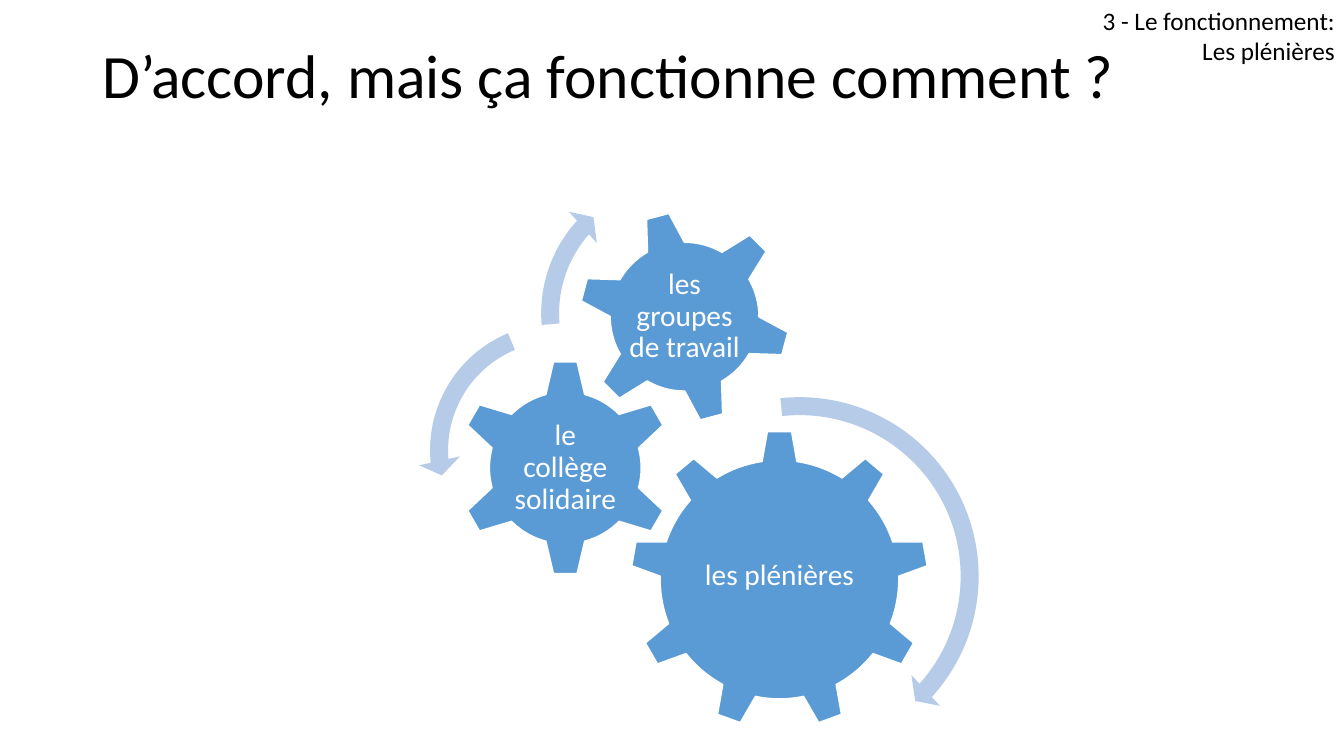
from dataclasses import dataclass

from pptx import Presentation
from pptx import util as u
from pptx.dml.color import RGBColor
from pptx.enum import shapes, text


@dataclass(frozen=True)
class Theme:
    font: str = "Calibri"
    ink: str = "000000"
    paper: str = "FFFFFF"
    gear: str = "5B9BD5"
    arrow: str = "B5CBE7"
    title_size: int = 44
    corner_size: int = 18
    label_size: int = 21


class SlideBuilder:
    """Places elements on a grid of 16 columns by 9 rows."""

    def __init__(self, deck, theme):
        self.theme = theme
        self.page = deck.slides.add_slide(deck.slide_layouts[5])
        self.cell_width = deck.slide_width / 16
        self.cell_height = deck.slide_height / 9

    def place(self, column, row, columns, rows):
        return (u.Emu(round(column * self.cell_width)),
                u.Emu(round(row * self.cell_height)),
                u.Emu(round(columns * self.cell_width)),
                u.Emu(round(rows * self.cell_height)))

    def around(self, centre, columns, rows):
        return self.place(centre[0] - columns / 2, centre[1] - rows / 2, columns, rows)

    def set_text(self, box, lines, size, color, align, spacing=1.0, **frame_format):
        frame = box.text_frame
        for name, value in {"word_wrap": True, **frame_format}.items():
            setattr(frame, name, value)
        for number, line in enumerate(lines):
            para = frame.add_paragraph() if number else frame.paragraphs[0]
            para.alignment, para.line_spacing = align, spacing
            span = para.add_run()
            span.text = line
            for name, value in {"name": self.theme.font, "size": u.Pt(size)}.items():
                setattr(span.font, name, value)
            span.font.color.rgb = RGBColor.from_string(color)

    def title(self, words, *cells):
        box = self.page.shapes.title
        box.left, box.top, box.width, box.height = self.place(*cells)
        self.set_text(box, [words], self.theme.title_size, self.theme.ink,
                      text.PP_ALIGN.LEFT, 0.9, auto_size=text.MSO_AUTO_SIZE.NONE,
                      vertical_anchor=text.MSO_ANCHOR.TOP)

    def corner(self, lines, *cells):
        box = self.page.shapes.add_textbox(*self.place(*cells))
        self.set_text(box, lines, self.theme.corner_size, self.theme.ink,
                      text.PP_ALIGN.RIGHT, auto_size=text.MSO_AUTO_SIZE.SHAPE_TO_FIT_TEXT)

    def solid(self, kind, centre, size, color):
        shape = self.page.shapes.add_shape(kind, *self.around(centre, size, size))
        shape.shadow.inherit = False
        shape.fill.solid()
        shape.fill.fore_color.rgb = RGBColor.from_string(color)
        return shape

    def gear(self, words, kind, centre, size, label, rotation=0):
        wheel = self.solid(kind, centre, size, self.theme.gear)
        wheel.rotation = rotation
        wheel.line.color.rgb = RGBColor.from_string(self.theme.paper)
        wheel.line.width = u.Pt(1)
        columns, rows, rise = label
        middle = centre[0], centre[1] - rise
        box = self.page.shapes.add_textbox(*self.around(middle, columns, rows))
        margins = {f"margin_{side}": u.Inches(0.03)
                   for side in ("left", "top", "right", "bottom")}
        self.set_text(box, [words], self.theme.label_size, self.theme.paper,
                      text.PP_ALIGN.CENTER, 0.9,
                      vertical_anchor=text.MSO_ANCHOR.MIDDLE, **margins)

    def arrow(self, kind, centre, size, bends):
        arc = self.solid(kind, centre, size, self.theme.arrow)
        arc.line.fill.background()
        for number, bend in enumerate(bends):
            arc.adjustments[number] = bend


def main():
    deck = Presentation()
    deck.slide_width, deck.slide_height = u.Inches(13.33), u.Inches(7.5)
    slide = SlideBuilder(deck, Theme())
    kinds = shapes.MSO_SHAPE

    # Headings
    slide.title("D’accord, mais ça fonctionne comment ?", 1.1, 0.48, 13.8, 1.74)
    slide.corner(["3 - Le fonctionnement:", "Les plénières"], 12.05, 0, 3.96, 0.85)

    # Gears: words, shape, centre, size, label (columns, rows, rise), rotation
    for gear in (
        ("les plénières", kinds.GEAR_9, (9.28, 6.9), 3.55, (2.12, 1.82, 0.04)),
        ("le collège solidaire", kinds.GEAR_6, (6.73, 5.57), 2.58, (1.3, 1.27, 0)),
        ("les groupes de travail", kinds.GEAR_6, (8.15, 3.77), 2.53, (1.43, 1.42, 0), 345),
    ):
        slide.gear(*gear)

    # Turning arrows: shape, centre, size, adjustments
    for arrow in (
        (kinds.CIRCULAR_ARROW, (9.52, 6.86), 4.55, (0.047, 2.99, 25.311, 158.294, 0.055)),
        (kinds.LEFT_CIRCULAR_ARROW, (6.63, 5.36), 3.3, (0.065, 4.3, 104.891, 148.378, 0.075)),
        (kinds.CIRCULAR_ARROW, (8.08, 3.73), 3.56, (0.06, 3.941, 133.138, 105.082, 0.07)),
    ):
        slide.arrow(*arrow)

    deck.save("out.pptx")


if __name__ == "__main__":
    main()
